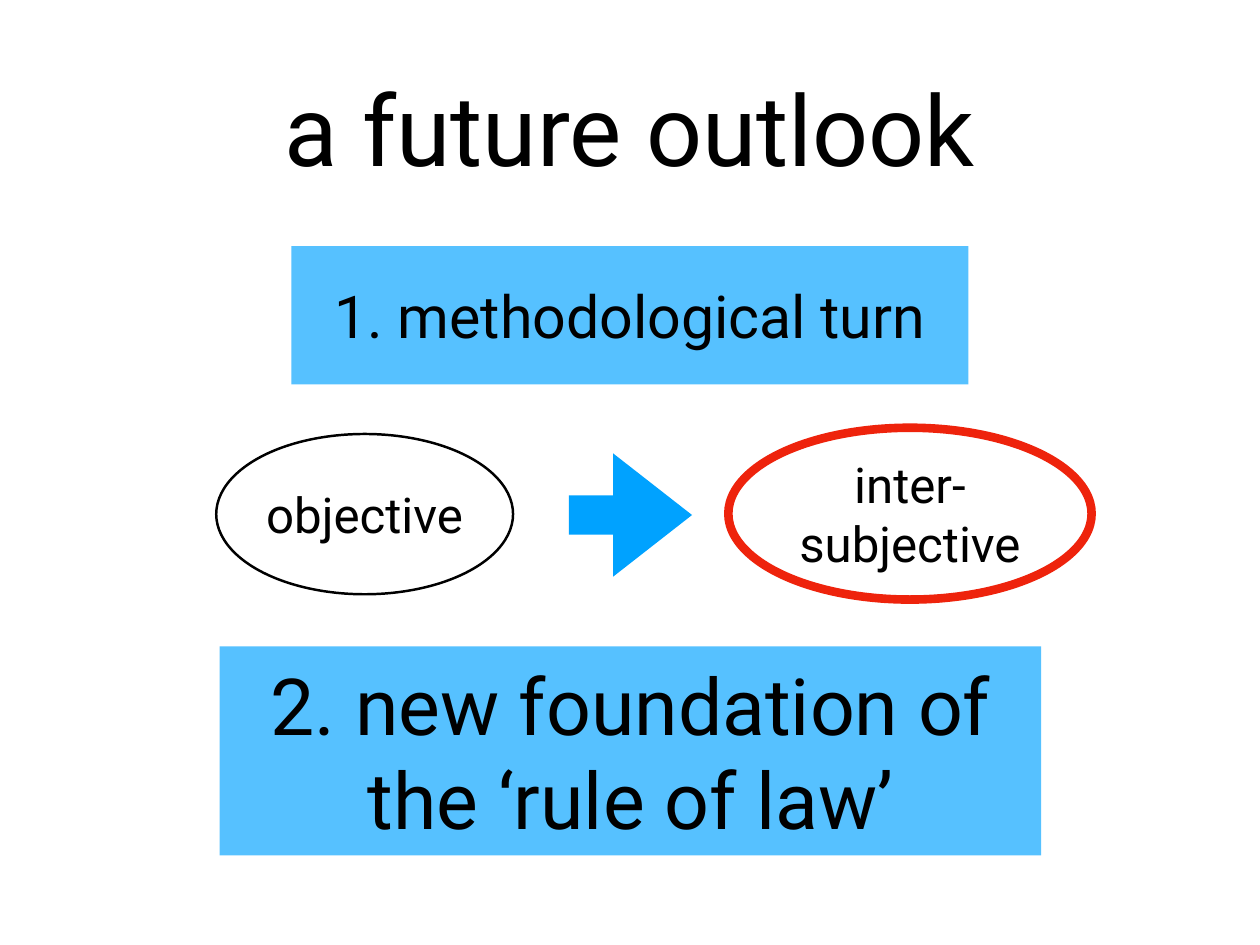
"""Build the slide "a future outlook" with its two theses and the turn between them."""
from dataclasses import dataclass
from typing import Optional

import pptx
import pptx.dml.color
import pptx.enum.shapes
import pptx.enum.text
import pptx.util

Inches = pptx.util.Inches
RGBColor = pptx.dml.color.RGBColor
Kind = pptx.enum.shapes.MSO_SHAPE

BLACK = RGBColor(0x00, 0x00, 0x00)
SKY = RGBColor(0x56, 0xC1, 0xFF)
BLUE = RGBColor(0x00, 0xA2, 0xFF)
RED = RGBColor(0xEE, 0x23, 0x0C)

INSET = Inches(0.06)
FRAME_FORMAT = {
    "margin_left": INSET,
    "margin_right": INSET,
    "margin_top": INSET,
    "margin_bottom": INSET,
    "word_wrap": True,
    "auto_size": pptx.enum.text.MSO_AUTO_SIZE.NONE,
    "vertical_anchor": pptx.enum.text.MSO_ANCHOR.MIDDLE,
}


@dataclass
class Figure:
    kind: Kind
    left: float
    top: float
    width: float
    height: float
    text: str = ""
    size: int = 40
    fill: Optional[RGBColor] = None
    line: Optional[RGBColor] = None
    weight: float = 0
    adjustments: tuple[float, ...] = ()


FIGURES = [
    Figure(Kind.RECTANGLE, 3.29, 2.78, 7.64, 1.56, "1. methodological turn", 48, SKY),
    Figure(Kind.RECTANGLE, 2.48, 7.3, 9.27, 2.36,
           "2. new foundation of the ‘rule of law’", 64, SKY),
    Figure(Kind.OVAL, 2.44, 4.9, 3.35, 1.81, "objective", line=BLACK, weight=2),
    Figure(Kind.OVAL, 8.22, 4.83, 4.1, 1.94, "inter-subjective", line=RED, weight=7),
    Figure(Kind.RIGHT_ARROW, 6.42, 5.12, 1.39, 1.39, fill=BLUE, adjustments=(0.32, 0.64)),
]


def write_text(box: pptx.shapes.base.BaseShape, text: str, size: int) -> None:
    """Write one centred paragraph into a shape."""
    frame = box.text_frame
    for name, value in FRAME_FORMAT.items():
        setattr(frame, name, value)
    para = frame.paragraphs[0]
    para.alignment = pptx.enum.text.PP_ALIGN.CENTER
    span = para.add_run()
    span.text = text
    span.font.color.rgb = BLACK
    for name, value in {"name": "Roboto", "size": pptx.util.Pt(size)}.items():
        setattr(span.font, name, value)


def draw_figure(page: pptx.slide.Slide, figure: Figure) -> None:
    """Draw one figure with its fill, outline and text."""
    place = [Inches(n) for n in (figure.left, figure.top, figure.width, figure.height)]
    box = page.shapes.add_shape(figure.kind, *place)
    box.shadow.inherit = False
    for index, value in enumerate(figure.adjustments):
        box.adjustments[index] = value
    if figure.fill is None:
        box.fill.background()
    else:
        box.fill.solid()
        box.fill.fore_color.rgb = figure.fill
    if figure.line is None:
        box.line.fill.background()
    else:
        box.line.color.rgb = figure.line
        box.line.width = pptx.util.Pt(figure.weight)
    if figure.text:
        write_text(box, figure.text, figure.size)


def main() -> None:
    """Create the deck and save it."""
    deck = pptx.Presentation()
    deck.slide_width, deck.slide_height = Inches(14.22), Inches(10.67)
    page = deck.slides.add_slide(deck.slide_layouts.get_by_name("Title Only"))
    title = page.shapes.title
    place = {"left": 1.04, "top": 0.25, "width": 12.14, "height": 2.36}
    for name, value in place.items():
        setattr(title, name, Inches(value))
    write_text(title, "a future outlook", 80)
    for figure in FIGURES:
        draw_figure(page, figure)
    deck.save("out.pptx")


if __name__ == "__main__":
    main()
